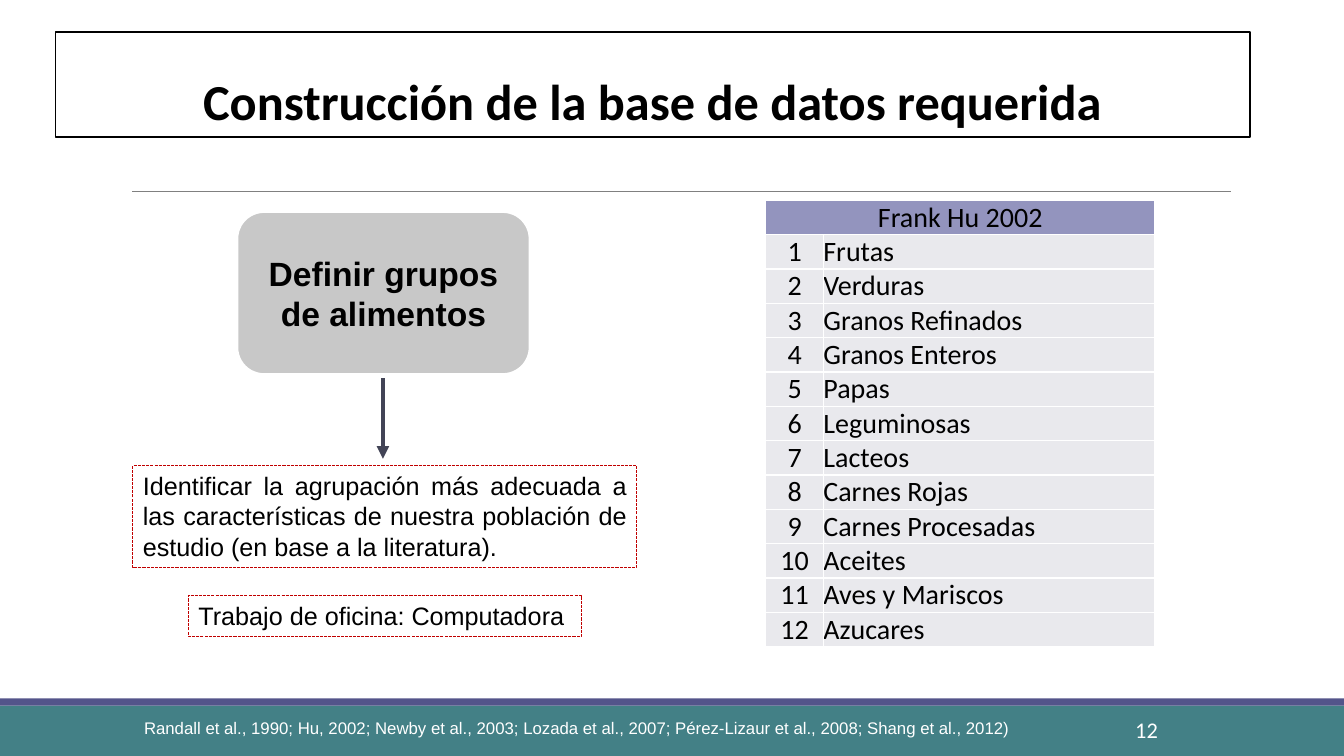
import pptx
import pptx.dml.color
import pptx.enum.dml
import pptx.enum.shapes
import pptx.enum.text
import pptx.oxml
import pptx.oxml.ns
import pptx.util

Cm = pptx.util.Cm
Pt = pptx.util.Pt
Align = pptx.enum.text.PP_ALIGN
Anchor = pptx.enum.text.MSO_ANCHOR
Shape = pptx.enum.shapes.MSO_SHAPE
Dash = pptx.enum.dml.MSO_LINE

THEME = {
    "black": "000000", "white": "FFFFFF", "teal": "438086", "band": "53548A",
    "rule": "808080", "gray": "C8C8C8", "arrow": "424456", "red": "C00000",
    "head": "9394BE", "row": "E9E9ED",
    "sans": "Arial", "main": "Calibri",
    "title": 36, "step": 24, "cell": 20, "body": 18, "page": 16, "cite": 12,
}

TITLE = "Construcción de la base de datos requerida"
STEP = "Definir grupos de alimentos"
TASK = ("Identificar la agrupación más adecuada a las características "
        "de nuestra población de estudio (en base a la literatura).")
WORK = "Trabajo de oficina: Computadora"
CITE = ("Randall et al., 1990; Hu, 2002; Newby et al., 2003; Lozada et al., 2007; "
        "Pérez-Lizaur et al., 2008; Shang et al., 2012)")
PAGE = "12"
HEAD = "Frank Hu 2002"
FOODS = ["Frutas", "Verduras", "Granos Refinados", "Granos Enteros", "Papas",
         "Leguminosas", "Lacteos", "Carnes Rojas", "Carnes Procesadas",
         "Aceites", "Aves y Mariscos", "Azucares"]

WIDE, HIGH = 33.87, 19.05
FOOT = 17.78
BAND = 0.18
TABLE = (19.3, 5.05)
COLS = (1.45, 8.35)
ROW = 0.85


def color(name):
    return pptx.dml.color.RGBColor.from_string(THEME[name])


def write(frame, text, size, font="sans", ink="black", align=Align.CENTER,
          anchor=Anchor.TOP, bold=False):
    frame.text = text
    frame.word_wrap = True
    frame.vertical_anchor = anchor
    para = frame.paragraphs[0]
    para.alignment = align
    run = para.runs[0]
    run.font.size = Pt(THEME[size])
    run.font.name = THEME[font]
    run.font.bold = bold
    run.font.color.rgb = color(ink)
    return para


def add_box(slide, place, fill=None, line=None, width=1, dash=None,
            kind=Shape.RECTANGLE):
    box = slide.shapes.add_shape(kind, *map(Cm, place))
    box.shadow.inherit = False
    if fill:
        box.fill.solid()
        box.fill.fore_color.rgb = color(fill)
    else:
        box.fill.background()
    if line:
        box.line.color.rgb = color(line)
        box.line.width = Pt(width)
        if dash:
            box.line.dash_style = dash
    else:
        box.line.fill.background()
    return box


def add_line(slide, ends, ink, width, arrow=False):
    line = slide.shapes.add_connector(
        pptx.enum.shapes.MSO_CONNECTOR.STRAIGHT, *map(Cm, ends))
    line.line.color.rgb = color(ink)
    line.line.width = Pt(width)
    if arrow:
        tail = pptx.oxml.parse_xml(
            f'<a:tailEnd {pptx.oxml.ns.nsdecls("a")} type="triangle"/>')
        line.line._get_or_add_ln().append(tail)
    line._element.spPr.append(pptx.oxml.parse_xml(
        f'<a:effectLst {pptx.oxml.ns.nsdecls("a")}/>'))


def set_cell(cell, fill):
    cell.margin_left = cell.margin_right = 0
    cell.margin_top = cell.margin_bottom = 0
    cell.vertical_anchor = Anchor.BOTTOM
    cell.fill.solid()
    cell.fill.fore_color.rgb = color(fill)
    props = cell._tc.get_or_add_tcPr()
    for spot, side in enumerate("LRTB"):
        props.insert(spot, pptx.oxml.parse_xml(
            f'<a:ln{side} {pptx.oxml.ns.nsdecls("a")} w="12700"><a:solidFill>'
            f'<a:srgbClr val="{THEME["white"]}"/></a:solidFill></a:ln{side}>'))


def add_foods(slide):
    count = len(FOODS) + 1
    size = (sum(COLS), ROW * count)
    table = slide.shapes.add_table(count, 2, *map(Cm, TABLE + size)).table
    for col, width in zip(table.columns, COLS):
        col.width = Cm(width)
    for row in table.rows:
        row.height = Cm(ROW)
    for spot in range(count):
        for col in range(2):
            set_cell(table.cell(spot, col), "row" if spot else "head")
    top = table.cell(0, 0)
    top.merge(table.cell(0, 1))
    write(top.text_frame, HEAD, "cell", "main", anchor=Anchor.BOTTOM)
    for spot, food in enumerate(FOODS, 1):
        write(table.cell(spot, 0).text_frame, str(spot), "cell", "main",
              anchor=Anchor.BOTTOM)
        write(table.cell(spot, 1).text_frame, food, "cell", "main",
              align=Align.LEFT, anchor=Anchor.BOTTOM)


def add_text(slide, place, text, size, **look):
    box = slide.shapes.add_textbox(*map(Cm, place))
    write(box.text_frame, text, size, ink="white", **look)


def main():
    deck = pptx.Presentation()
    deck.slide_width, deck.slide_height = Cm(WIDE), Cm(HIGH)
    slide = deck.slides.add_slide(deck.slide_layouts[6])

    add_box(slide, (0, FOOT, WIDE, HIGH - FOOT), "teal")
    add_box(slide, (0, FOOT - BAND, WIDE, BAND), "band")
    add_line(slide, (3.33, 4.83, 31.01, 4.83), "rule", 0.5)

    step = add_box(slide, (5.97, 5.33, 7.39, 4.11), "gray", "white", 2,
                   kind=Shape.ROUNDED_RECTANGLE)
    write(step.text_frame, STEP, "step", anchor=Anchor.MIDDLE, bold=True)
    add_line(slide, (9.65, 9.53, 9.65, 11.56), "arrow", 3, arrow=True)

    for text, place in ((TASK, (3.35, 11.73, 12.7, 2.57)),
                        (WORK, (4.75, 15.01, 9.91, 1.02))):
        box = add_box(slide, place, None, "red", 0.75, Dash.SQUARE_DOT)
        box.line.dash_style = Dash.DASH
        box.line._get_or_add_ln().prstDash.set("val", "sysDash")
        write(box.text_frame, text, "body", align=Align.JUSTIFY)

    title = add_box(slide, (1.4, 0.81, 30.1, 2.64), "white", "black", 1.25)
    para = write(title.text_frame, TITLE, "title", "main",
                 anchor=Anchor.BOTTOM, bold=True)
    para.line_spacing = 0.9

    add_foods(slide)
    add_text(slide, (3.38, 17.96, 24.13, 0.76), CITE, "cite", align=Align.JUSTIFY)
    add_text(slide, (27.51, 17.93, 2.77, 1.12), PAGE, "page", font="main")
    deck.save("out.pptx")


if __name__ == "__main__":
    main()
